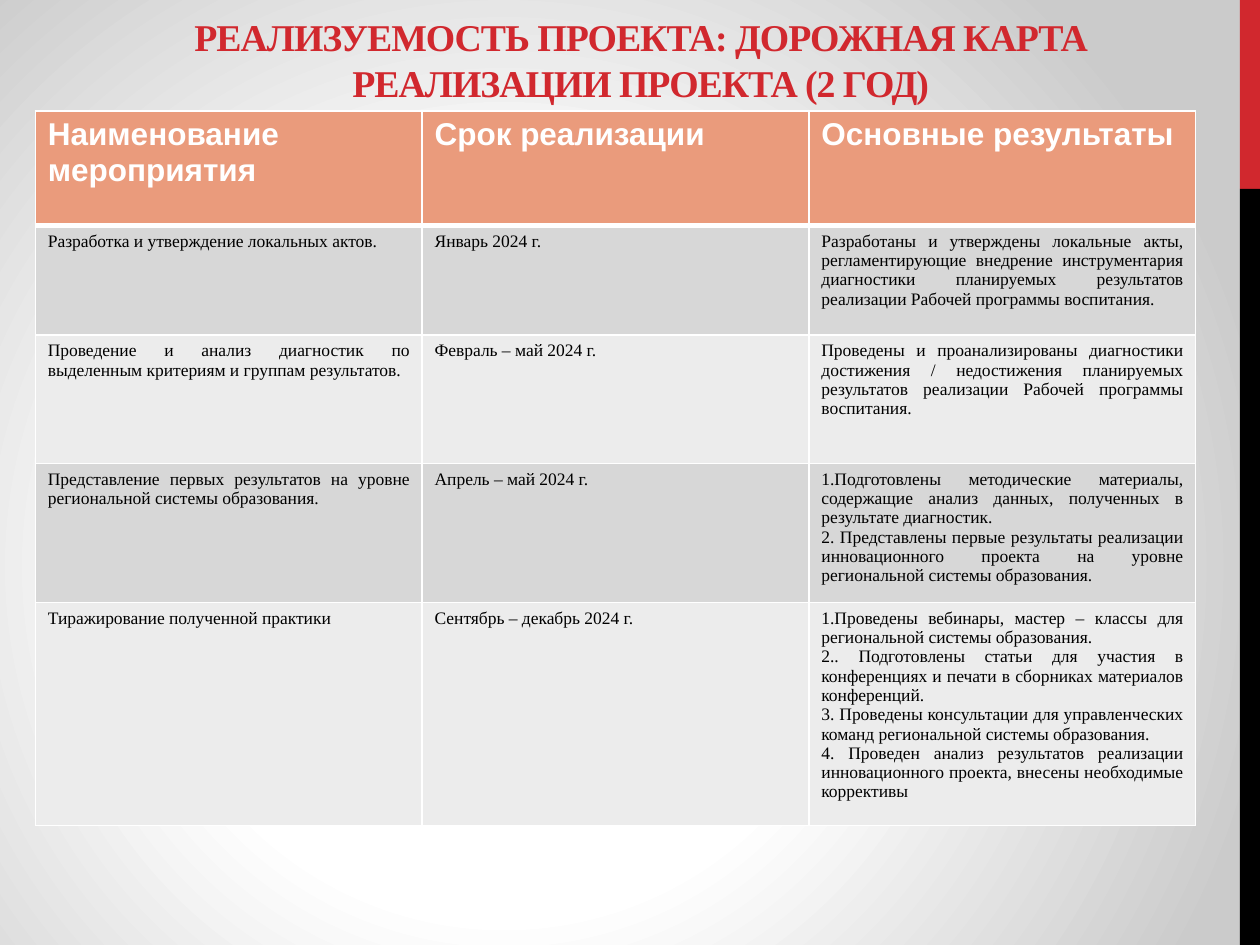
from dataclasses import dataclass

from pptx import Presentation
from pptx.dml.color import RGBColor
from pptx.enum.shapes import MSO_SHAPE
from pptx.enum.text import MSO_ANCHOR, PP_ALIGN
from pptx.oxml import parse_xml
from pptx.oxml.ns import nsdecls, qn
from pptx.util import Inches, Pt

RECTANGLE = MSO_SHAPE.RECTANGLE
BOTTOM = MSO_ANCHOR.BOTTOM
LEFT, CENTER, JUSTIFY = PP_ALIGN.LEFT, PP_ALIGN.CENTER, PP_ALIGN.JUSTIFY

TITLE = "РЕАЛИЗУЕМОСТЬ ПРОЕКТА: ДОРОЖНАЯ КАРТА РЕАЛИЗАЦИИ ПРОЕКТА (2 ГОД)"
ROADMAP = [
    ("Наименование мероприятия", "Срок реализации", "Основные результаты"),
    (
        "Разработка и утверждение локальных актов.",
        "Январь 2024 г.",
        "Разработаны и утверждены локальные акты, регламентирующие внедрение "
        "инструментария диагностики планируемых результатов реализации "
        "Рабочей программы воспитания.",
    ),
    (
        "Проведение и анализ диагностик по выделенным критериям и группам результатов.",
        "Февраль – май 2024 г.",
        "Проведены и проанализированы диагностики достижения / недостижения "
        "планируемых результатов реализации Рабочей программы воспитания.",
    ),
    (
        "Представление первых результатов на уровне региональной системы образования.",
        "Апрель – май 2024 г.",
        "1.Подготовлены методические материалы, содержащие анализ данных, "
        "полученных в результате диагностик.\n"
        "2. Представлены первые результаты реализации инновационного проекта "
        "на уровне региональной системы образования.",
    ),
    (
        "Тиражирование полученной практики",
        "Сентябрь – декабрь 2024 г.",
        "1.Проведены вебинары, мастер – классы для региональной системы образования.\n"
        "2.. Подготовлены статьи для участия в конференциях и печати "
        "в сборниках материалов конференций.\n"
        "3. Проведены консультации для управленческих команд "
        "региональной системы образования.\n"
        "4. Проведен анализ результатов реализации инновационного проекта, "
        "внесены необходимые коррективы",
    ),
]
ROW_HEIGHTS = [0.91, 0.87, 1.02, 1.02, 1.63]
COLUMN_WIDTH = 3.07


@dataclass(frozen=True)
class Theme:
    """Colours, fonts and type sizes of the deck."""

    red: str = "D1282E"
    black: str = "000000"
    white: str = "FFFFFF"
    edge: str = "CBCBCB"
    header: str = "EA9B7C"
    bands: tuple = ("D7D7D7", "ECECEC")
    serif: str = "Times New Roman"
    sans: str = "Arial"
    title_size: float = 21.6
    header_size: float = 18
    body_size: float = 10


class SlideBuilder:
    """Draws styled elements on the current page."""

    def __init__(self, page, theme):
        self.page = page
        self.theme = theme

    def background(self):
        theme = self.theme
        stops = "".join(
            f'<a:gs pos="{position * 1000}"><a:srgbClr val="{color}"/></a:gs>'
            for position, color in ((0, theme.white), (44, theme.white), (100, theme.edge))
        )
        self.page.background.fill.gradient()
        default = self.page.element.find(".//" + qn("a:gradFill"))
        default.getparent().replace(default, parse_xml(
            f'<a:gradFill {nsdecls("a")} rotWithShape="1"><a:gsLst>{stops}</a:gsLst>'
            '<a:path path="circle"><a:fillToRect l="40000" t="60000" r="60000" b="40000"/>'
            "</a:path></a:gradFill>"
        ))

    def bar(self, left, top, width, height, color):
        shape = self.page.shapes.add_shape(
            RECTANGLE, Inches(left), Inches(top), Inches(width), Inches(height))
        shape.shadow.inherit = False
        shape.fill.solid()
        shape.fill.fore_color.rgb = RGBColor.from_string(color)
        shape.line.fill.background()

    def fill_text(self, frame, text, font, size, color, bold, align):
        frame.text = text
        for para in frame.paragraphs:
            para.alignment = align
            para.font.name = font
            para.font.size = Pt(size)
            para.font.bold = bold
            para.font.color.rgb = RGBColor.from_string(color)

    def title(self, text, left, top, width, height):
        box = self.page.shapes.add_textbox(
            Inches(left), Inches(top), Inches(width), Inches(height))
        frame = box.text_frame
        frame.word_wrap = True
        frame.vertical_anchor = BOTTOM
        theme = self.theme
        self.fill_text(frame, text, theme.serif, theme.title_size, theme.red, True, CENTER)
        for span in frame.paragraphs[0].runs:
            span._r.get_or_add_rPr().set("spc", "-60")

    def borders(self, cell, top, bottom):
        sides = (("L", 1), ("R", 1), ("T", top), ("B", bottom))
        properties = cell._tc.get_or_add_tcPr()
        for index, (side, width) in enumerate(sides):
            properties.insert(index, parse_xml(
                f'<a:ln{side} {nsdecls("a")} w="{Pt(width)}"><a:solidFill>'
                f'<a:srgbClr val="{self.theme.white}"/></a:solidFill></a:ln{side}>'
            ))

    def table(self, rows, left, top, column_width, heights):
        theme = self.theme
        columns = len(rows[0])
        table = self.page.shapes.add_table(
            len(rows), columns, Inches(left), Inches(top),
            Inches(column_width * columns), Inches(sum(heights))).table
        for column in table.columns:
            column.width = Inches(column_width)
        for index, (texts, height) in enumerate(zip(rows, heights)):
            table.rows[index].height = Inches(height)
            if index == 0:
                fill = theme.header
                style = (theme.sans, theme.header_size, theme.white, True, LEFT)
            else:
                fill = theme.bands[(index - 1) % 2]
                style = (theme.serif, theme.body_size, theme.black, False, JUSTIFY)
            for cell, text in zip(table.rows[index].cells, texts):
                cell.fill.solid()
                cell.fill.fore_color.rgb = RGBColor.from_string(fill)
                self.borders(cell, 3 if index == 1 else 1, 3 if index == 0 else 1)
                self.fill_text(cell.text_frame, text, *style)


def main():
    deck = Presentation()
    deck.slide_width, deck.slide_height = Inches(10), Inches(7.5)
    theme = Theme()
    builder = SlideBuilder(deck.slides.add_slide(deck.slide_layouts[6]), theme)
    builder.background()
    builder.bar(9.84, 0, 0.16, 1.5, theme.red)
    builder.bar(9.84, 1.5, 0.16, 6, theme.black)
    builder.title(TITLE, 0.51, 0.21, 9.15, 0.67)
    builder.table(ROADMAP, 0.28, 0.88, COLUMN_WIDTH, ROW_HEIGHTS)
    deck.save("out.pptx")


if __name__ == "__main__":
    main()
